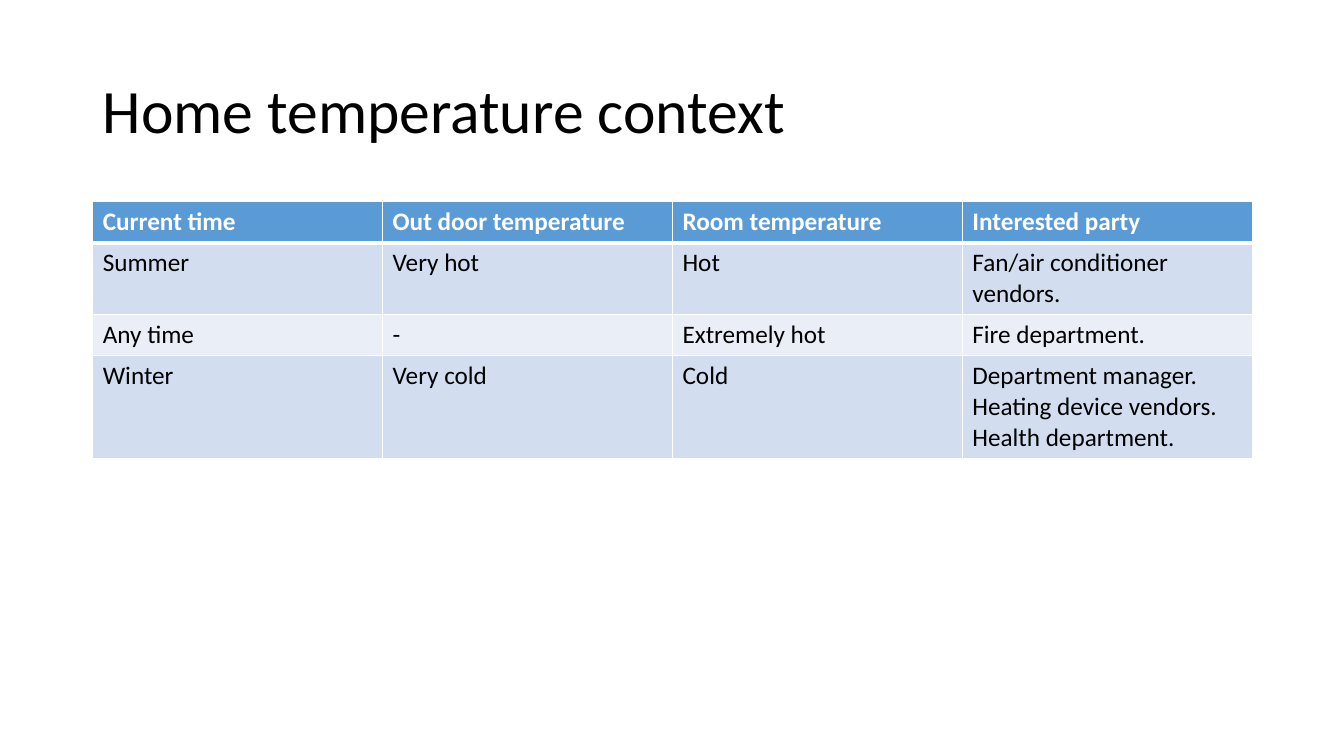
from lxml import etree
from pptx import Presentation
from pptx import util as u
from pptx.dml.color import RGBColor
from pptx.enum import text
from pptx.oxml.ns import qn

FONT = "Calibri"
ROWS = [
    ["Current time", "Out door temperature", "Room temperature", "Interested party"],
    ["Summer", "Very hot", "Hot", "Fan/air conditioner vendors."],
    ["Any time", "-", "Extremely hot", "Fire department."],
    ["Winter", "Very cold", "Cold",
     "Department manager.\nHeating device vendors.\nHealth department."],
]
ROW_HEIGHTS = [0.41, 0.7, 0.41, 1.01]
HEADER_FILL = "5B9BD5"
BAND_FILLS = ["EAEFF7", "D2DEEF"]


def color(value):
    return RGBColor.from_string(value)


def style_font(font, size, value, bold=False):
    font.name = FONT
    font.size = u.Pt(size)
    font.bold = bold
    font.color.rgb = color(value)


def set_borders(cell, widths):
    properties = cell._tc.get_or_add_tcPr()
    for index, (side, width) in enumerate(widths.items()):
        line = etree.Element(qn(f"a:ln{side}"), w=str(u.Pt(width)))
        fill = etree.SubElement(line, qn("a:solidFill"))
        etree.SubElement(fill, qn("a:srgbClr"), val="FFFFFF")
        properties.insert(index, line)


def add_title(page, words):
    title = page.shapes.title
    title.left, title.top = u.Inches(0.92), u.Inches(0.4)
    title.width, title.height = u.Inches(11.5), u.Inches(1.45)
    frame = title.text_frame
    frame.text = words
    frame.vertical_anchor = text.MSO_ANCHOR.MIDDLE
    para = frame.paragraphs[0]
    para.alignment = text.PP_ALIGN.LEFT
    para.line_spacing = 0.9
    style_font(para.font, 44, "000000")


def fill_cell(cell, words, row):
    header = row == 0
    cell.text = words
    cell.fill.solid()
    cell.fill.fore_color.rgb = color(HEADER_FILL if header else BAND_FILLS[row % 2])
    for para in cell.text_frame.paragraphs:
        style_font(para.font, 18, "FFFFFF" if header else "000000", header)
    set_borders(cell, {"L": 1, "R": 1, "T": 3 if row == 1 else 1, "B": 3 if header else 1})


def add_context_table(page):
    frame = page.shapes.add_table(
        len(ROWS), len(ROWS[0]), u.Inches(0.92), u.Inches(2),
        u.Inches(11.5), u.Inches(sum(ROW_HEIGHTS)))
    table = frame.table
    for row, (entries, height) in enumerate(zip(ROWS, ROW_HEIGHTS)):
        table.rows[row].height = u.Inches(height)
        for column, words in enumerate(entries):
            fill_cell(table.cell(row, column), words, row)


def main():
    deck = Presentation()
    deck.slide_width, deck.slide_height = u.Inches(13.33), u.Inches(7.5)
    page = deck.slides.add_slide(deck.slide_layouts.get_by_name("Title Only"))
    add_title(page, "Home temperature context")
    add_context_table(page)
    deck.save("out.pptx")


if __name__ == "__main__":
    main()
